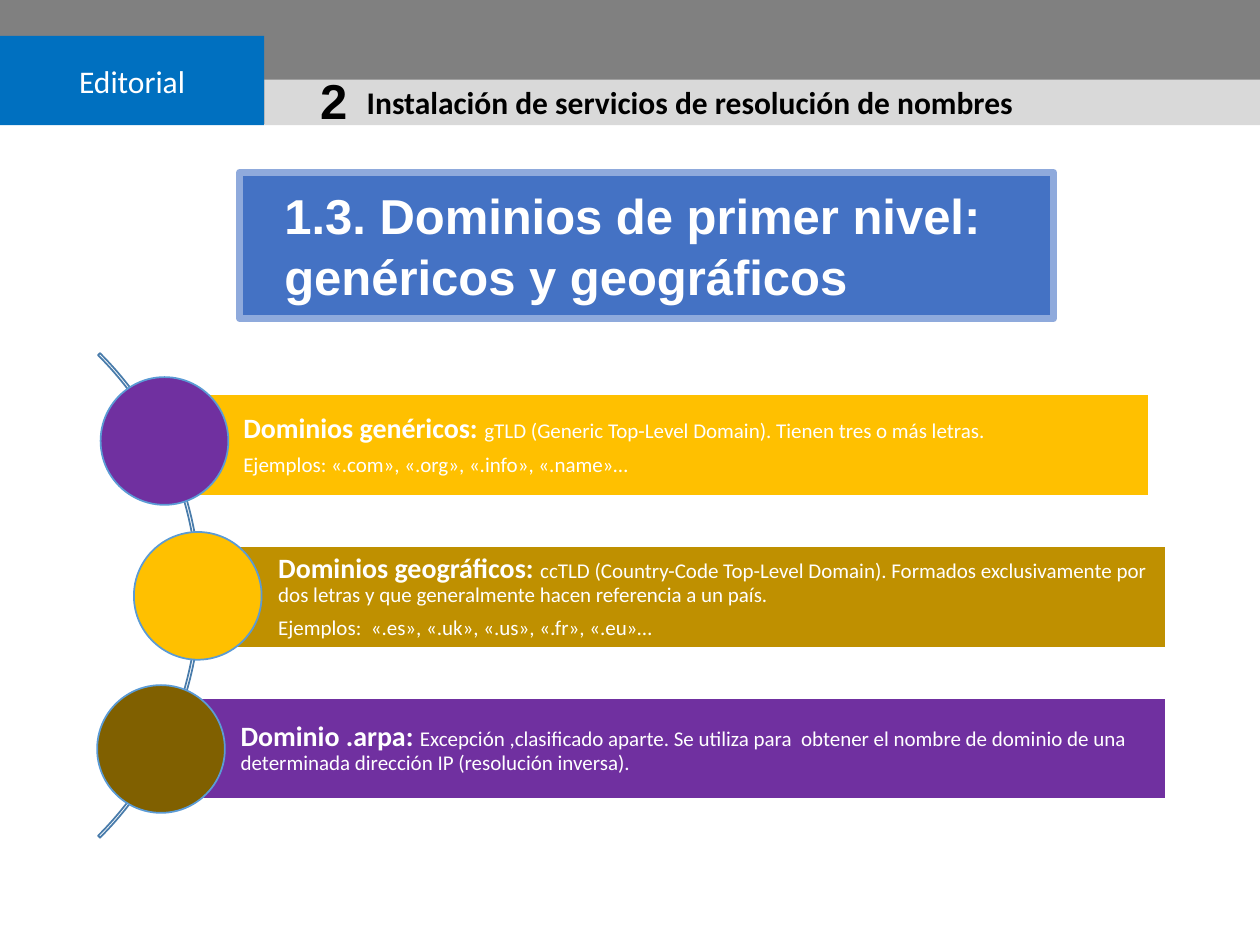
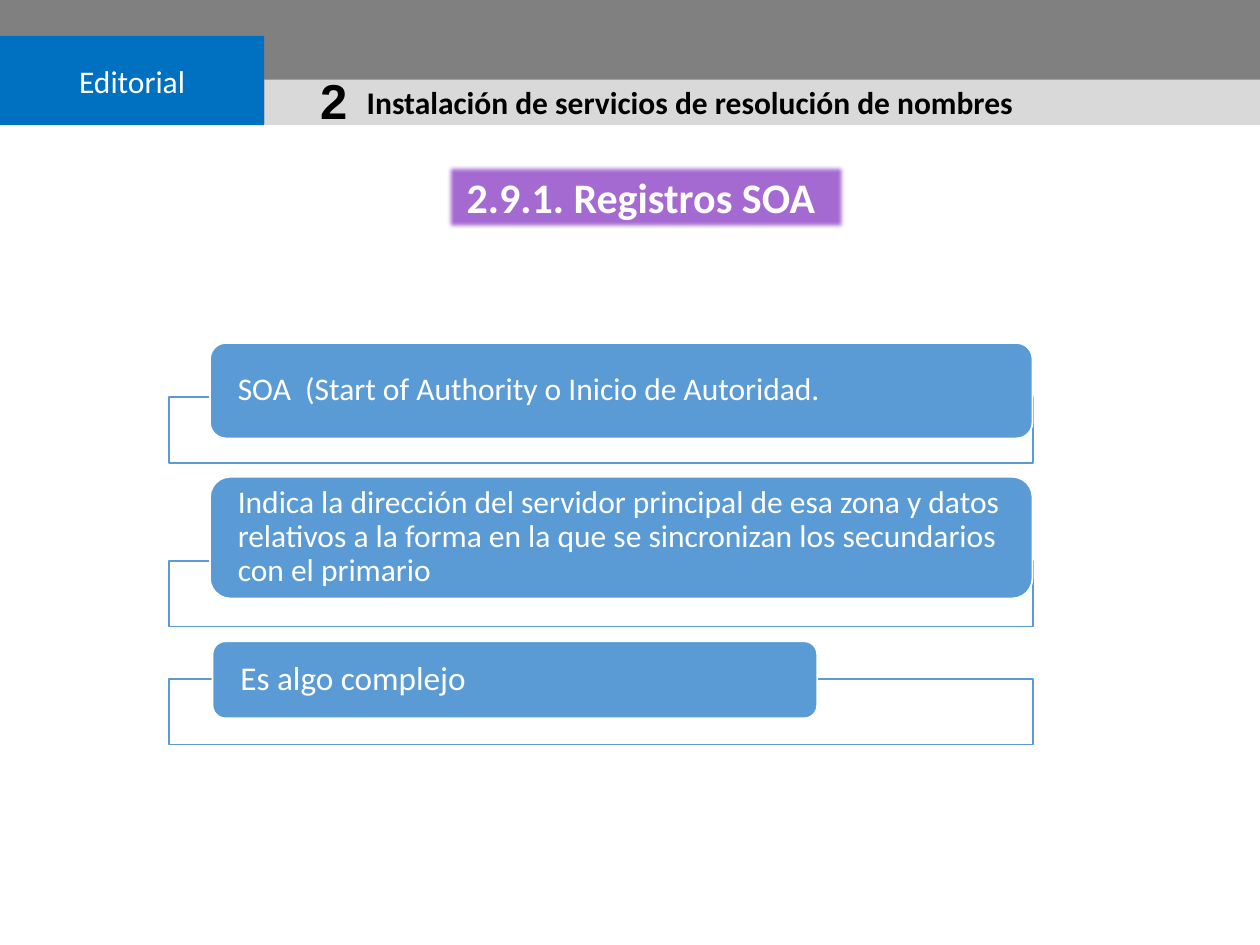
from lxml import etree
from pptx import Presentation
from pptx.dml.color import RGBColor
from pptx.enum import shapes, text
from pptx.oxml import ns
from pptx.util import Pt

WHITE = RGBColor(0xFF, 0xFF, 0xFF)
BLACK = RGBColor(0, 0, 0)
GRAY = RGBColor(0x80, 0x80, 0x80)
LIGHT_GRAY = RGBColor(0xD9, 0xD9, 0xD9)
BRAND_BLUE = RGBColor(0x00, 0x70, 0xC0)
TITLE_BLUE = RGBColor(0x44, 0x72, 0xC4)
TITLE_EDGE = RGBColor(0x8F, 0xAA, 0xDC)
SKY_BLUE = RGBColor(0x5B, 0x9B, 0xD5)
ARC_BLUE = RGBColor(0x49, 0x7C, 0xAB)
LILAC = RGBColor(0xA6, 0x6B, 0xD3)
PURPLE = RGBColor(0x70, 0x30, 0xA0)
GOLD = RGBColor(0xFF, 0xC0, 0x00)
DARK_GOLD = RGBColor(0xBF, 0x90, 0x00)
BROWN = RGBColor(0x80, 0x60, 0x00)

RECTANGLE = shapes.MSO_SHAPE.RECTANGLE
ROUNDED = shapes.MSO_SHAPE.ROUNDED_RECTANGLE
LEFT, CENTER = text.PP_ALIGN.LEFT, text.PP_ALIGN.CENTER
TOP, MIDDLE = text.MSO_ANCHOR.TOP, text.MSO_ANCHOR.MIDDLE

BRAND_FONT = dict(name="Calibri", size=Pt(18), bold=False)
NUMBER_FONT = dict(name="Arial", size=Pt(28), bold=True)
UNIT_FONT = dict(name="Calibri", size=Pt(18), bold=True)
RECORD_TITLE_FONT = dict(name="Calibri", size=Pt(24), bold=True)
LEAD_FONT = dict(name="Calibri", size=Pt(16), bold=True)
DETAIL_FONT = dict(name="Calibri", size=Pt(12), bold=False)
LIST_FORMAT = dict(alignment=LEFT, line_spacing=0.9, space_after=Pt(5.6))

HEADER_BANDS = [
    ((0, 0, 720, 71), GRAY, "", None, None),
    ((0, 20.5, 151, 51), BRAND_BLUE, "Editorial", BRAND_FONT, WHITE),
    ((151, 45.5, 569, 26), LIGHT_GRAY, "", None, None),
    ((154, 46, 73.5, 22.5), LIGHT_GRAY, "2", NUMBER_FONT, BLACK),
]
UNIT_TITLE = "Instalación de servicios de resolución de nombres"

DOMAIN_TITLE = ["1.3. Dominios de primer nivel:", "genéricos y geográficos"]
DOMAINS = [
    dict(bar=(82, 574.5), inset=57, circle=(57.5, 215.5), colors=(GOLD, PURPLE),
         lead="Dominios genéricos: ",
         detail="gTLD (Generic Top-Level Domain). Tienen tres o más letras.",
         examples="Ejemplos: «.com», «.org», «.info», «.name»…"),
    dict(bar=(113, 553), inset=46, circle=(76.5, 304), colors=(DARK_GOLD, GOLD),
         lead="Dominios geográficos: ",
         detail="ccTLD (Country-Code Top-Level Domain). Formados exclusivamente por "
                "dos letras y que generalmente hacen referencia a un país.",
         examples="Ejemplos:  «.es», «.uk», «.us», «.fr», «.eu»…"),
    dict(bar=(91.5, 574.5), inset=46, circle=(55.5, 391.5), colors=(PURPLE, BROWN),
         lead="Dominio .arpa: ",
         detail="Excepción ,clasificado aparte. Se utiliza para  obtener el nombre de "
                "dominio de una determinada dirección IP (resolución inversa).",
         examples=None),
]
BAR_TOP, BAR_STEP, BAR_HEIGHT, CIRCLE_SIZE = 225.5, 86.6, 58, 73

RECORD_TITLE = "2.9.1. Registros SOA "
RECORDS = [
    ((120, 196, 470, 54.5), 227, 18, "SOA  (Start of Authority o Inicio de Autoridad."),
    ((120, 272.5, 470, 69.5), 320.5, 18,
     "Indica la dirección del servidor principal de esa zona y datos relativos a la "
     "forma en la que se sincronizan los secundarios con el primario"),
    ((121.5, 366.5, 345.5, 44), 388, 19, "Es algo complejo"),
]
FRAME_LEFT, FRAME_WIDTH, FRAME_HEIGHT = 96.5, 494, 37.5


def apply_format(target, values):
    for name, value in values.items():
        setattr(target, name, value)


def place(shape, box):
    apply_format(shape, dict(zip(("left", "top", "width", "height"), map(Pt, box))))


def paint(shape, fill=None, line=None, line_width=1):
    if fill is None:
        shape.fill.background()
    else:
        shape.fill.solid()
        shape.fill.fore_color.rgb = fill
    if line is None:
        shape.line.fill.background()
    else:
        shape.line.color.rgb = line
        shape.line.width = Pt(line_width)


def add_figure(slide, kind, box, fill=None, line=None):
    shape = slide.shapes.add_shape(kind, *map(Pt, box))
    shape.shadow.inherit = False
    paint(shape, fill, line)
    return shape


def set_frame(shape, margins=(7.2, 3.6, 7.2, 3.6), anchor=MIDDLE, wrap=True):
    names = ("margin_left", "margin_top", "margin_right", "margin_bottom")
    values = dict(zip(names, map(Pt, margins)))
    apply_format(shape.text_frame, dict(values, vertical_anchor=anchor, word_wrap=wrap,
                                        auto_size=text.MSO_AUTO_SIZE.NONE))


def write(shape, paragraphs, color, paragraph_format):
    frame = shape.text_frame
    for index, runs in enumerate(paragraphs):
        paragraph = frame.add_paragraph() if index else frame.paragraphs[0]
        apply_format(paragraph, paragraph_format)
        for words, font in runs:
            run = paragraph.add_run()
            run.text = words
            apply_format(run.font, font)
            run.font.color.rgb = color


def add_header(layout, slide):
    bands = []
    for box, fill, words, font, color in HEADER_BANDS:
        band = add_figure(slide, RECTANGLE, box, fill)
        if words:
            set_frame(band)
            write(band, [[(words, font)]], color, dict(alignment=CENTER))
        bands.append(band)
    unit = slide.shapes.add_textbox(*map(Pt, (202.5, 44, 476, 29)))
    set_frame(unit, anchor=TOP)
    write(unit, [[(UNIT_TITLE, UNIT_FONT)]], BLACK, dict(alignment=LEFT))
    for number, shape in enumerate(bands + [unit], 20):
        shape.element.nvSpPr.cNvPr.set("id", str(number))
        layout.shapes.element.append(shape.element)


def set_geometry(shape, preset):
    geometry = etree.Element(ns.qn("a:prstGeom"), prst=preset)
    etree.SubElement(geometry, ns.qn("a:avLst"))
    shape.element.spPr.insert(1, geometry)


def soften_edge(shape, radius):
    effects = etree.SubElement(shape.element.spPr, ns.qn("a:effectLst"))
    etree.SubElement(effects, ns.qn("a:softEdge"), rad=str(int(Pt(radius))))


def set_opacity(shape, percent):
    color = shape.element.spPr.find(ns.qn("a:solidFill"))[0]
    etree.SubElement(color, ns.qn("a:alpha"), val=str(percent * 1000))


def build_domains(slide):
    title = slide.shapes.title
    place(title, (137, 98.5, 465, 83.5))
    set_geometry(title, "roundRect")
    paint(title, TITLE_BLUE, TITLE_EDGE, 4)
    set_frame(title, (25.5, 3.6, 7.2, 3.6))
    write(title, [[(line, NUMBER_FONT)] for line in DOMAIN_TITLE], WHITE,
          dict(alignment=LEFT))
    title.text_frame.paragraphs[1].space_before = Pt(1.5)

    arc = add_figure(slide, shapes.MSO_SHAPE.BLOCK_ARC, (-277, 144.5, 391.5, 391.5),
                     line=ARC_BLUE)
    for index, value in enumerate((189, 27, 0.004)):
        arc.adjustments[index] = value

    for row, domain in enumerate(DOMAINS):
        left, width = domain["bar"]
        bar_color, circle_color = domain["colors"]
        bar = add_figure(slide, RECTANGLE,
                         (left, BAR_TOP + row * BAR_STEP, width, BAR_HEIGHT),
                         bar_color, WHITE)
        set_frame(bar, (domain["inset"], 3, 3, 3))
        paragraphs = [[(domain["lead"], LEAD_FONT), (domain["detail"], DETAIL_FONT)]]
        if domain["examples"]:
            paragraphs.append([(domain["examples"], DETAIL_FONT)])
        write(bar, paragraphs, WHITE, LIST_FORMAT)
        add_figure(slide, shapes.MSO_SHAPE.OVAL,
                   (*domain["circle"], CIRCLE_SIZE, CIRCLE_SIZE), circle_color, SKY_BLUE)


def build_records(slide):
    title = slide.shapes.title
    place(title, (255.5, 94.5, 227, 36))
    set_geometry(title, "rect")
    paint(title, LILAC)
    soften_edge(title, 2.5)
    set_frame(title, anchor=TOP, wrap=False)
    write(title, [[(RECORD_TITLE, RECORD_TITLE_FONT)]], WHITE, dict(alignment=CENTER))

    for box, frame_top, size, words in RECORDS:
        frame = add_figure(slide, RECTANGLE,
                           (FRAME_LEFT, frame_top, FRAME_WIDTH, FRAME_HEIGHT),
                           WHITE, SKY_BLUE)
        set_opacity(frame, 90)
        label = add_figure(slide, ROUNDED, box, SKY_BLUE, WHITE)
        radius_inset = 0.05 * box[3]
        set_frame(label, (16 - radius_inset, 0, 16 - radius_inset, 0))
        write(label, [[(words, dict(name="Calibri", size=Pt(size)))]], WHITE, LIST_FORMAT)


def main():
    presentation = Presentation()
    presentation.slide_width, presentation.slide_height = Pt(720), Pt(540)
    layout = presentation.slide_layouts[5]
    domains_slide = presentation.slides.add_slide(layout)
    add_header(layout, domains_slide)
    build_domains(domains_slide)
    build_records(presentation.slides.add_slide(layout))
    presentation.save("out.pptx")


if __name__ == "__main__":
    main()
